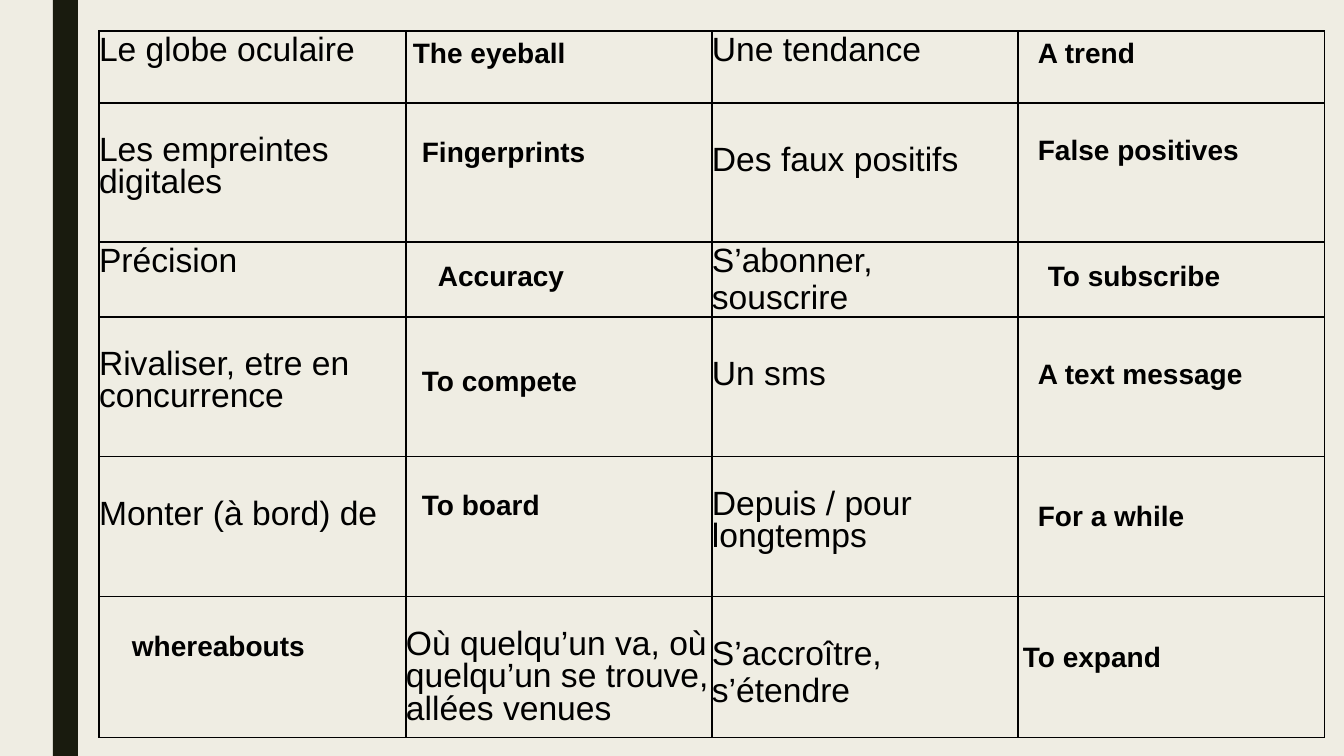
from dataclasses import dataclass

from lxml.etree import SubElement
from pptx import Presentation
from pptx.dml.color import RGBColor as Rgb
from pptx.enum.shapes import MSO_SHAPE as Kind
from pptx.enum.text import MSO_AUTO_SIZE as Fit
from pptx.oxml.ns import qn
from pptx.slide import Slide
from pptx.table import _Cell as Cell
from pptx.text.text import TextFrame as Frame
from pptx.util import Emu, Pt

SCALE = 12192000 / 1344  # EMU in one px


@dataclass(frozen=True)
class Theme:
    paper: str = "EFEDE3"
    bar: str = "191B0E"
    ink: str = "000000"
    font: str = "Arial"
    term: int = 24
    gloss: int = 20
    rule: int = 1


@dataclass(frozen=True)
class Term:
    row: int
    col: int
    text: str
    drop: int = 0
    lead: float = 1.0


@dataclass(frozen=True)
class Gloss:
    x: int
    y: int
    text: str


THEME = Theme()
LOW = {"drop": 38}
TIGHT = {"drop": 33, "lead": 0.86}

COLS = (307, 306, 306, 307)
ROWS = (72, 139, 75, 140, 140, 141)

TERMS = (
    Term(0, 0, "Le globe oculaire"),
    Term(0, 2, "Une tendance"),
    Term(1, 0, "Les empreintes digitales", **TIGHT),
    Term(1, 2, "Des faux positifs", **LOW),
    Term(2, 0, "Précision"),
    Term(2, 2, "S’abonner, souscrire"),
    Term(3, 0, "Rivaliser, etre en concurrence", **TIGHT),
    Term(3, 2, "Un sms", **LOW),
    Term(4, 0, "Monter (à bord) de", **LOW),
    Term(4, 2, "Depuis / pour longtemps", **TIGHT),
    Term(5, 1, "Où quelqu’un va, où quelqu’un se trouve, allées venues", **TIGHT),
    Term(5, 2, "S’accroître, s’étendre", **LOW),
)

GLOSSES = (
    Gloss(403, 31, "The eyeball"),
    Gloss(1028, 31, "A trend"),
    Gloss(412, 130, "Fingerprints"),
    Gloss(1028, 128, "False positives"),
    Gloss(428, 254, "Accuracy"),
    Gloss(1038, 254, "To subscribe"),
    Gloss(412, 359, "To compete"),
    Gloss(1028, 352, "A text message"),
    Gloss(412, 483, "To board"),
    Gloss(1028, 494, "For a while"),
    Gloss(122, 624, "whereabouts"),
    Gloss(1013, 635, "To expand"),
)


def px(n: int) -> Emu:
    return Emu(round(n * SCALE))


def write(frame: Frame, text: str, *, size: int, bold: bool = False,
          lead: float = 1.0) -> None:
    frame.word_wrap = True
    para = frame.paragraphs[0]
    para.line_spacing = lead
    run = para.add_run()
    run.text = text
    font = run.font
    font.name, font.size, font.bold = THEME.font, Pt(size), bold
    font.color.rgb = Rgb.from_string(THEME.ink)


def style(cell: Cell) -> None:
    """Clear the fill and margins, and rule all four sides."""
    cell.margin_left = cell.margin_right = 0
    cell.margin_top = cell.margin_bottom = 0
    props = cell._tc.get_or_add_tcPr()
    for side in ("a:lnL", "a:lnR", "a:lnT", "a:lnB"):
        line = SubElement(props, qn(side), w=str(Pt(THEME.rule)))
        fill = SubElement(line, qn("a:solidFill"))
        SubElement(fill, qn("a:srgbClr"), val=THEME.ink)
    cell.fill.background()


def draw_bar(slide: Slide) -> None:
    bar = slide.shapes.add_shape(Kind.RECTANGLE, px(53), 0, px(25), px(756))
    bar.shadow.inherit = False
    bar.fill.solid()
    bar.fill.fore_color.rgb = Rgb.from_string(THEME.bar)
    bar.line.fill.background()


def draw_table(slide: Slide) -> None:
    table = slide.shapes.add_table(
        len(ROWS), len(COLS), px(99), px(31), px(sum(COLS)), px(sum(ROWS))
    ).table
    table.first_row = table.horz_banding = False
    for col, width in zip(table.columns, COLS):
        col.width = px(width)
    for row, height in zip(table.rows, ROWS):
        row.height = px(height)
    for cell in table.iter_cells():
        style(cell)
    for term in TERMS:
        cell = table.cell(term.row, term.col)
        cell.margin_top = px(term.drop)
        write(cell.text_frame, term.text, size=THEME.term, lead=term.lead)


def draw_gloss(slide: Slide, gloss: Gloss) -> None:
    box = slide.shapes.add_textbox(px(gloss.x), px(gloss.y), px(244), px(78))
    write(box.text_frame, gloss.text, size=THEME.gloss, bold=True)
    box.text_frame.auto_size = Fit.SHAPE_TO_FIT_TEXT


def main() -> None:
    deck = Presentation()
    deck.slide_width, deck.slide_height = px(1344), px(756)
    slide = deck.slides.add_slide(deck.slide_layouts[6])

    # Backdrop
    slide.background.fill.solid()
    slide.background.fill.fore_color.rgb = Rgb.from_string(THEME.paper)
    draw_bar(slide)

    # French terms in the grid, English glosses on top
    draw_table(slide)
    for gloss in GLOSSES:
        draw_gloss(slide, gloss)

    deck.save("out.pptx")


if __name__ == "__main__":
    main()
